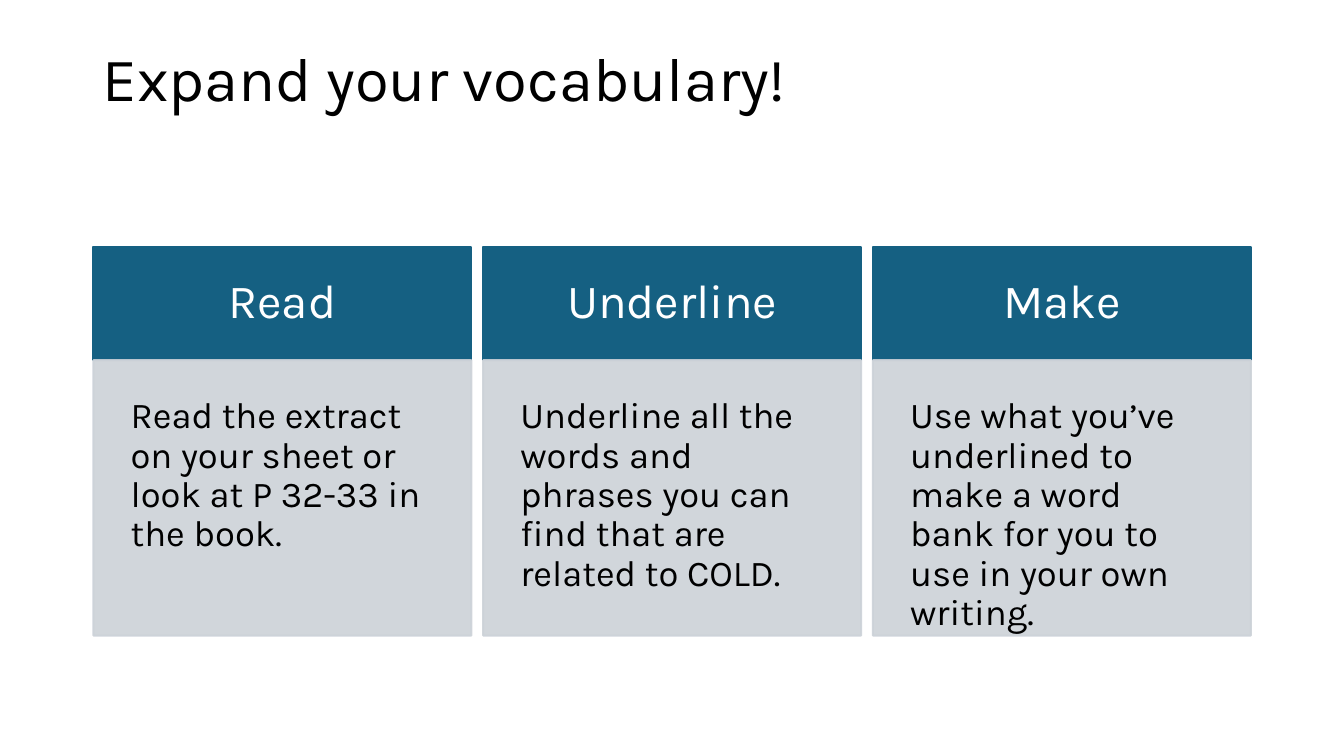
"""Build the vocabulary slide with three task cards."""
import pptx
import pptx.util
import pptx.dml.color
import pptx.enum.shapes
import pptx.enum.text
import pptx.oxml

Pt = pptx.util.Pt
Align = pptx.enum.text.PP_ALIGN
Anchor = pptx.enum.text.MSO_ANCHOR
RGB = pptx.dml.color.RGBColor.from_string
NS = 'xmlns:a="http://schemas.openxmlformats.org/drawingml/2006/main"'

hues = {"head": "156082", "body": "CCD2D8", "light": "FFFFFF", "dark": "000000"}
looks = {
    "title": {"size": 44, "hue": "dark", "align": Align.LEFT, "anchor": Anchor.TOP,
              "pads": (7.2, 6, 7.2, 3.6)},
    "head": {"size": 34, "hue": "light", "align": Align.CENTER, "anchor": Anchor.MIDDLE,
             "pads": (21.6, 21.6, 21.6, 21.6)},
    "body": {"size": 26, "hue": "dark", "align": Align.LEFT, "anchor": Anchor.TOP,
             "pads": (26.6, 26.6, 26.6, 0)},
}
cards = [
    ("Read", "Read the extract on your sheet or look at P 32-33 in the book."),
    ("Underline", "Underline all the words and phrases you can find that are related to COLD."),
    ("Make", "Use what you’ve underlined to make a word bank for you to use in your own writing."),
]


def write(shape, text, look):
    frame = shape.text_frame
    frame.text = text
    left, top, right, low = look["pads"]
    form = {"word_wrap": True, "auto_size": pptx.enum.text.MSO_AUTO_SIZE.NONE,
            "vertical_anchor": look["anchor"], "margin_left": Pt(left),
            "margin_top": Pt(top), "margin_right": Pt(right), "margin_bottom": Pt(low)}
    for key, val in form.items():
        setattr(frame, key, val)
    para = frame.paragraphs[0]
    para.alignment = look["align"]
    para.line_spacing = 0.9
    font = para.runs[0].font
    for key, val in {"name": "Karla", "size": Pt(look["size"])}.items():
        setattr(font, key, val)
    font.color.rgb = RGB(hues[look["hue"]])


deck = pptx.Presentation()
deck.slide_width, deck.slide_height = Pt(960), Pt(540)
slide = deck.slides.add_slide(deck.slide_layouts[5])

title = slide.shapes.title
place = {"left": 66, "top": 28.8, "width": 828, "height": 104.4}
for key, val in place.items():
    setattr(title, key, Pt(val))
write(title, "Expand your vocabulary!", looks["title"])

start, step, wide = 66.7, 278.4, 270
rows = {"head": (176.4, 80.9), "body": (257.3, 196.7)}
for col, texts in enumerate(cards):
    for (part, (top, high)), text in zip(rows.items(), texts):
        box = slide.shapes.add_shape(pptx.enum.shapes.MSO_SHAPE.RECTANGLE,
                                     Pt(start + col * step), Pt(top), Pt(wide), Pt(high))
        box.shadow.inherit = False
        box.fill.solid()
        box.line.width = Pt(1.5)
        for paint in (box.fill.fore_color, box.line.color):
            paint.rgb = RGB(hues[part])
        if part == "body":
            for tone in box.element.spPr.iter("{*}srgbClr"):
                tone.append(pptx.oxml.parse_xml(f'<a:alpha {NS} val="90000"/>'))
        write(box, text, looks[part])

deck.save("out.pptx")
